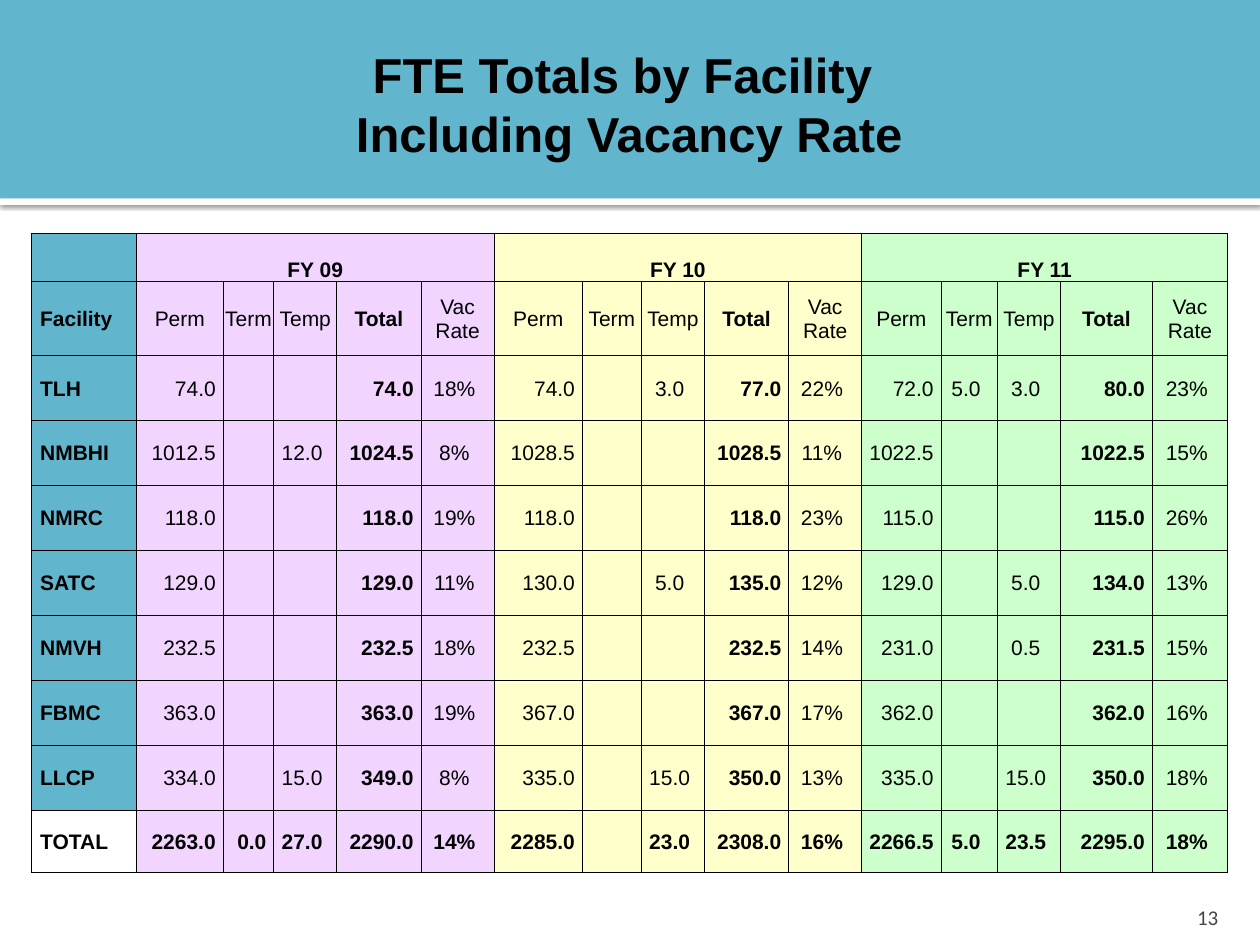
import lxml.etree
import pptx
import pptx.dml.color
import pptx.enum.shapes
import pptx.enum.text
import pptx.oxml.ns
import pptx.util

Cm = pptx.util.Cm
Pt = pptx.util.Pt
qn = pptx.oxml.ns.qn
SubElement = lxml.etree.SubElement
ALIGN = pptx.enum.text.PP_ALIGN
ANCHOR = pptx.enum.text.MSO_ANCHOR
BLUE = "61B6CD"


def rgb(hex_color):
    return pptx.dml.color.RGBColor.from_string(hex_color)


def set_text(tf, text, size, align, bold=False, font="Arial", color="000000"):
    tf.text = text
    for p in tf.paragraphs:
        p.alignment = align
        p.font.size = Pt(size)
        for r in p.runs:
            r.font.name = font
            r.font.size = Pt(size)
            r.font.bold = bold
            r.font.color.rgb = rgb(color)


prs = pptx.Presentation()
prs.slide_width = Cm(25.4)
prs.slide_height = Cm(19.05)
s = prs.slides.add_slide(prs.slide_layouts[6])

# Header band, with a shadowed white strip below it
for top, height, color in [(4, 0.13, "FFFFFF"), (0, 4, BLUE)]:
    sp = s.shapes.add_shape(pptx.enum.shapes.MSO_SHAPE.RECTANGLE,
                            0, Cm(top), prs.slide_width, Cm(height))
    sp.shadow.inherit = False
    sp.fill.solid()
    sp.fill.fore_color.rgb = rgb(color)
    sp.line.fill.background()
    if color == "FFFFFF":
        effects = sp._element.spPr.find(qn("a:effectLst"))
        shadow = SubElement(effects, qn("a:outerShdw"), blurRad=str(Pt(2.5)),
                            dist=str(Pt(0.8)), dir="5400000", rotWithShape="0")
        shade = SubElement(shadow, qn("a:srgbClr"), val="000000")
        SubElement(shade, qn("a:alpha"), val="60000")

# Slide number
tf = s.shapes.add_textbox(Cm(22.78), Cm(17.98), Cm(2.03), Cm(0.76)).text_frame
tf.word_wrap = True
tf.vertical_anchor = ANCHOR.BOTTOM
tf.margin_bottom = 0
set_text(tf, "13", 12, ALIGN.RIGHT, font="Calibri", color="454545")

# Table: one facility column, then five columns for each year
years = [("FY 09", "F1D5FF"), ("FY 10", "FFFFCC"), ("FY 11", "CCFFCC")]
measures = ["Perm", "Term", "Temp", "Total"]
rows = [
    [""] + [text for year, _ in years for text in (year, "", "", "", "")],
    ["Facility", *measures, "Vac Rate", *measures, "Vac\nRate", *measures, "Vac Rate"],
    ["TLH", "74.0", "", "", "74.0", "18%", "74.0", "", "3.0", "77.0", "22%",
     "72.0", "5.0", "3.0", "80.0", "23%"],
    ["NMBHI", "1012.5", "", "12.0", "1024.5", "8%", "1028.5", "", "", "1028.5", "11%",
     "1022.5", "", "", "1022.5", "15%"],
    ["NMRC", "118.0", "", "", "118.0", "19%", "118.0", "", "", "118.0", "23%",
     "115.0", "", "", "115.0", "26%"],
    ["SATC", "129.0", "", "", "129.0", "11%", "130.0", "", "5.0", "135.0", "12%",
     "129.0", "", "5.0", "134.0", "13%"],
    ["NMVH", "232.5", "", "", "232.5", "18%", "232.5", "", "", "232.5", "14%",
     "231.0", "", "0.5", "231.5", "15%"],
    ["FBMC", "363.0", "", "", "363.0", "19%", "367.0", "", "", "367.0", "17%",
     "362.0", "", "", "362.0", "16%"],
    ["LLCP", "334.0", "", "15.0", "349.0", "8%", "335.0", "", "15.0", "350.0", "13%",
     "335.0", "", "15.0", "350.0", "18%"],
    ["TOTAL", "2263.0", "0.0", "27.0", "2290.0", "14%", "2285.0", "", "23.0", "2308.0",
     "16%", "2266.5", "5.0", "23.5", "2295.0", "18%"],
]
col_widths = [2.11, 1.75, 1.02, 1.27, 1.7, 1.47, 1.78, 1.19, 1.27, 1.7, 1.47,
              1.6, 1.14, 1.27, 1.85, 1.52]
row_heights = [0.98, 1.49] + [1.31] * 7 + [1.25]
last = len(rows) - 1

table = s.shapes.add_table(len(rows), len(col_widths), Cm(0.64), Cm(4.7),
                           Cm(sum(col_widths)), Cm(sum(row_heights))).table
table.first_row = False
table.horz_banding = False
for column, width in zip(table.columns, col_widths):
    column.width = Cm(width)
for row, height in zip(table.rows, row_heights):
    row.height = Cm(height)
for first in (1, 6, 11):
    table.cell(0, first).merge(table.cell(0, first + 4))

for i, row in enumerate(rows):
    for j, text in enumerate(row):
        cell = table.cell(i, j)
        measure = (j - 1) % 5
        is_number = i > 1 and j > 0
        if j == 0:
            align = ALIGN.LEFT
        elif is_number and (measure in (0, 3) or (i, j) == (last, 2)):
            align = ALIGN.RIGHT
        else:
            align = ALIGN.CENTER
        bold = i in (0, last) or j == 0 or measure == 3
        set_text(cell.text_frame, text, 12, align, bold)
        cell.vertical_anchor = ANCHOR.BOTTOM if i == 0 else ANCHOR.MIDDLE
        cell.margin_left = Cm(0.17 if j == 0 else 0.02)
        cell.margin_right = Cm(0.15 if is_number else 0.02)
        cell.margin_top = Cm(0.02)
        cell.margin_bottom = 0

        tc_pr = cell._tc.get_or_add_tcPr()
        for side in ("lnL", "lnR", "lnT", "lnB"):
            ln = SubElement(tc_pr, qn("a:" + side), w=str(Pt(0.5)))
            SubElement(SubElement(ln, qn("a:solidFill")), qn("a:srgbClr"), val="000000")
        if (i, j) == (last, 0):
            cell.fill.background()
        else:
            cell.fill.solid()
            cell.fill.fore_color.rgb = rgb(BLUE if j == 0 else years[(j - 1) // 5][1])

# Title
tf = s.shapes.add_textbox(Cm(1.47), Cm(0.76), Cm(22.43), Cm(2.64)).text_frame
tf.word_wrap = True
tf.vertical_anchor = ANCHOR.MIDDLE
set_text(tf, "FTE Totals by Facility \nIncluding Vacancy Rate", 28, ALIGN.CENTER, bold=True)

prs.save("out.pptx")
